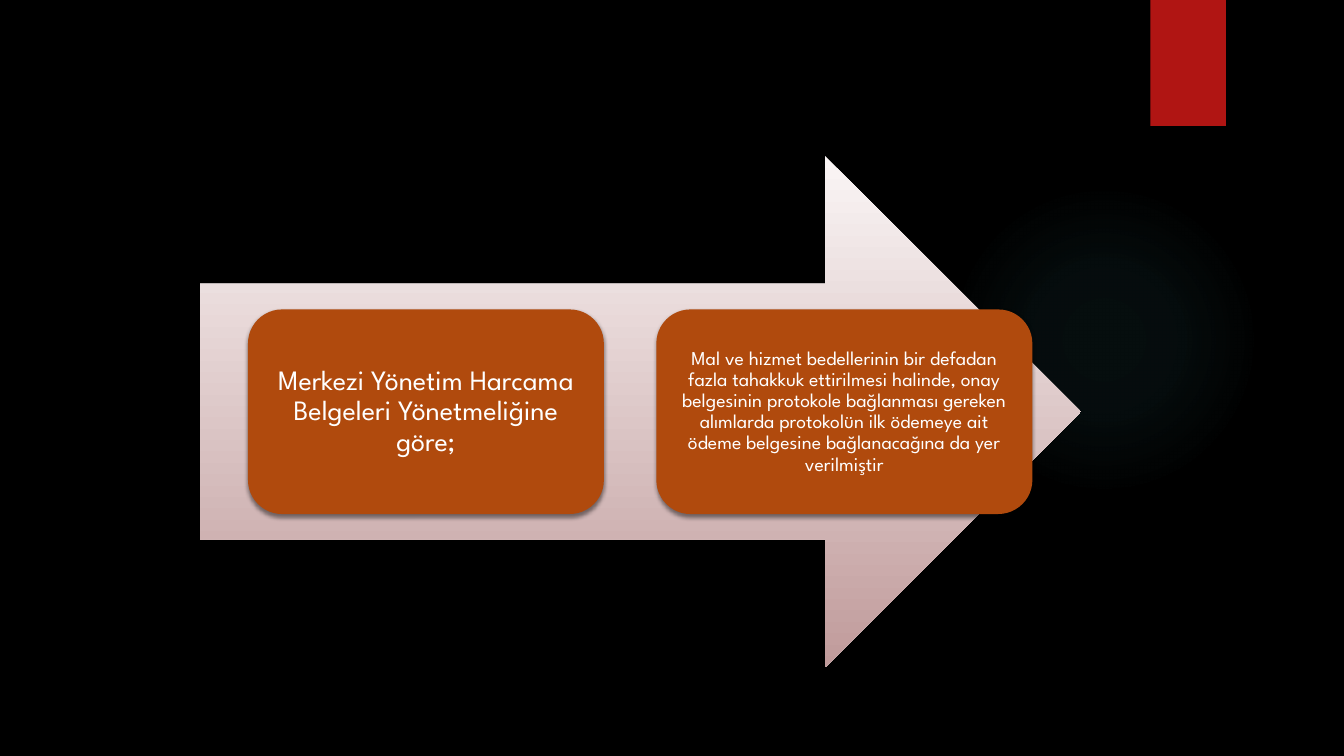
from dataclasses import dataclass

from lxml import etree
from pptx import Presentation
from pptx.dml.color import RGBColor
from pptx.enum import shapes, text
from pptx.oxml import ns
from pptx.util import Inches, Pt

SHAPE = shapes.MSO_SHAPE


@dataclass(frozen=True)
class Theme:
    background: str = "000000"
    glow: str = "50B9C1"
    ribbon: str = "B01513"
    arrow_top: str = "FAF5F5"
    arrow_bottom: str = "C09B9B"
    card: str = "B04A0D"
    card_text: str = "FFFFFF"
    shadow: str = "000000"
    font: str = "League Spartan"
    lead_size: int = 20
    detail_size: int = 14


def add_element(parent, tag, **attributes):
    values = {name: str(value) for name, value in attributes.items()}
    return etree.SubElement(parent, ns.qn(tag), values)


def add_color(parent, color, opacity=100):
    rgb = add_element(parent, "a:srgbClr", val=color)
    if opacity < 100:
        add_element(rgb, "a:alpha", val=opacity * 1000)


class SlideBuilder:
    def __init__(self, slide, theme):
        self.slide = slide
        self.theme = theme
        slide.background.fill.solid()
        slide.background.fill.fore_color.rgb = RGBColor.from_string(theme.background)

    def shape(self, kind, left, top, width, height):
        shape = self.slide.shapes.add_shape(
            kind, Inches(left), Inches(top), Inches(width), Inches(height))
        shape.line.fill.background()
        shape.shadow.inherit = False
        return shape

    def gradient(self, kind, box, stops, radial=False):
        """Stops are (position %, colour, opacity %)."""
        shape = self.shape(kind, *box)
        fill = etree.Element(ns.qn("a:gradFill"), rotWithShape="1")
        stop_list = add_element(fill, "a:gsLst")
        for position, color, opacity in stops:
            add_color(add_element(stop_list, "a:gs", pos=position * 1000), color, opacity)
        if radial:
            center = add_element(fill, "a:path", path="circle")
            add_element(center, "a:fillToRect", l=50000, t=50000, r=50000, b=50000)
        else:
            add_element(fill, "a:lin", ang=90 * 60000, scaled=0)
        shape.element.spPr.find(ns.qn("a:prstGeom")).addnext(fill)

    def raised(self, kind, box, color):
        """Solid shape with a soft shadow below it."""
        shape = self.shape(kind, *box)
        shape.fill.solid()
        shape.fill.fore_color.rgb = RGBColor.from_string(color)
        effects = shape.element.spPr.find(ns.qn("a:effectLst"))
        shadow = add_element(effects, "a:outerShdw", blurRad=Pt(3), dist=Pt(2),
                             dir=90 * 60000, algn="ctr", rotWithShape=0)
        add_color(shadow, self.theme.shadow, 45)
        return shape

    def card(self, left, width, words, size, inset):
        card = self.raised(SHAPE.ROUNDED_RECTANGLE, (left, 3.07, width, 2.03), self.theme.card)
        frame = card.text_frame
        frame.word_wrap = True
        frame.vertical_anchor = text.MSO_ANCHOR.MIDDLE
        frame.margin_left = frame.margin_right = Inches(inset)
        frame.margin_top = frame.margin_bottom = Inches(inset)
        paragraph = frame.paragraphs[0]
        paragraph.text = words
        paragraph.alignment = text.PP_ALIGN.CENTER
        paragraph.line_spacing = 0.9
        paragraph.font.name = self.theme.font
        paragraph.font.size = Pt(size)
        paragraph.font.color.rgb = RGBColor.from_string(self.theme.card_text)


def main():
    presentation = Presentation()
    presentation.slide_width = Inches(13.33)
    presentation.slide_height = Inches(7.5)
    theme = Theme()
    builder = SlideBuilder(
        presentation.slides.add_slide(presentation.slide_layouts[6]), theme)

    # Background glow and ribbon
    builder.gradient(SHAPE.OVAL, (9.41, 1.83, 3.08, 3.08),
                     [(0, theme.glow, 7), (36, theme.glow, 6), (69, theme.glow, 0)],
                     radial=True)
    builder.raised(SHAPE.RECTANGLE, (11.41, 0, 0.75, 1.25), theme.ribbon)

    # Process arrow
    builder.gradient(SHAPE.RIGHT_ARROW, (1.98, 1.55, 8.74, 5.07),
                     [(0, theme.arrow_top, 100), (100, theme.arrow_bottom, 100)])

    # Regulation and its provision
    builder.card(2.46, 3.53, "Merkezi Yönetim Harcama Belgeleri Yönetmeliğine göre;",
                 theme.lead_size, inset=0.08)
    builder.card(6.51, 3.73,
                 "Mal ve hizmet bedellerinin bir defadan fazla tahakkuk ettirilmesi "
                 "halinde, onay belgesinin protokole bağlanması gereken alımlarda "
                 "protokolün ilk ödemeye ait ödeme belgesine bağlanacağına da yer "
                 "verilmiştir",
                 theme.detail_size, inset=0.06)

    presentation.save("out.pptx")


if __name__ == "__main__":
    main()
